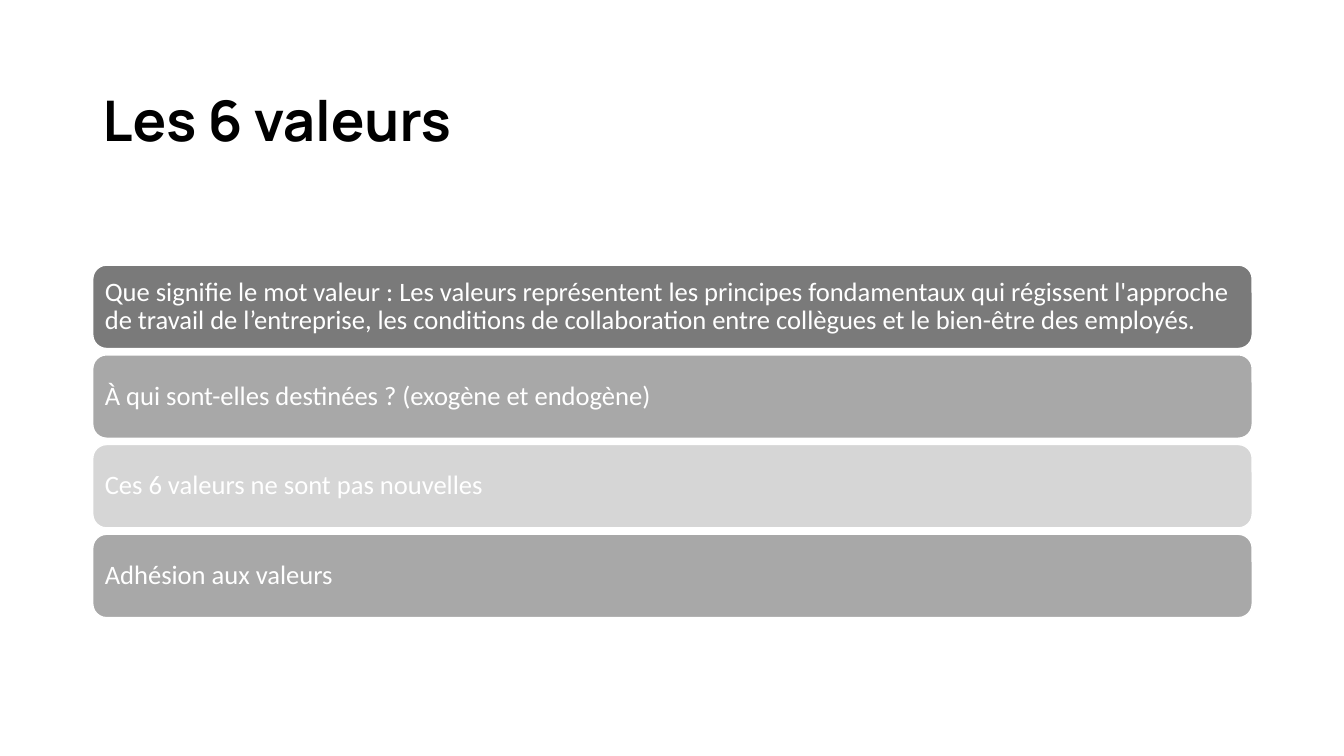
import pptx
import pptx.dml.color
import pptx.enum.shapes
import pptx.enum.text
import pptx.util

BLACK = pptx.dml.color.RGBColor(0x00, 0x00, 0x00)
WHITE = pptx.dml.color.RGBColor(0xFF, 0xFF, 0xFF)
DARK_GREY = pptx.dml.color.RGBColor(0x7A, 0x7A, 0x7A)
MID_GREY = pptx.dml.color.RGBColor(0xA8, 0xA8, 0xA8)
LIGHT_GREY = pptx.dml.color.RGBColor(0xD6, 0xD6, 0xD6)

VALUES = [
    ("Que signifie le mot valeur : Les valeurs représentent les principes "
     "fondamentaux qui régissent l'approche de travail de l’entreprise, les "
     "conditions de collaboration entre collègues et le bien-être des employés.",
     DARK_GREY),
    ("À qui sont-elles destinées ? (exogène et endogène)", MID_GREY),
    ("Ces 6 valeurs ne sont pas nouvelles", LIGHT_GREY),
    ("Adhésion aux valeurs", MID_GREY),
]


def apply_format(target, values):
    for name, value in values.items():
        setattr(target, name, value)


class ValuesSlide:
    left = 0.92
    top = 0.61
    width = 11.5
    row = 0.89
    title_font = {"name": "Manrope", "size": pptx.util.Pt(40), "bold": True}
    bar_font = {"name": "Calibri", "size": pptx.util.Pt(19), "bold": False}
    bar_paragraph = {"space_after": pptx.util.Pt(6.65)}
    bar_margins = {
        f"margin_{side}": pptx.util.Inches(0.08)
        for side in ("left", "top", "right", "bottom")
    }

    def __init__(self, presentation):
        self.slide = presentation.slides.add_slide(presentation.slide_layouts[6])

    def box(self, first_row, rows):
        lengths = (self.left, self.top + first_row * self.row,
                   self.width, rows * self.row)
        return [pptx.util.Inches(length) for length in lengths]

    def add_text(self, shape, text, font, color):
        frame = shape.text_frame
        apply_format(frame, {
            "word_wrap": True,
            "vertical_anchor": pptx.enum.text.MSO_ANCHOR.MIDDLE})
        paragraph = frame.paragraphs[0]
        apply_format(paragraph, {
            "alignment": pptx.enum.text.PP_ALIGN.LEFT,
            "line_spacing": 0.9})
        run = paragraph.add_run()
        run.text = text
        apply_format(run.font, font)
        run.font.color.rgb = color
        return paragraph

    def title(self, text, first_row, rows):
        shape = self.slide.shapes.add_textbox(*self.box(first_row, rows))
        self.add_text(shape, text, self.title_font, BLACK)

    def bar(self, text, fill, first_row, rows):
        shape = self.slide.shapes.add_shape(
            pptx.enum.shapes.MSO_SHAPE.ROUNDED_RECTANGLE,
            *self.box(first_row, rows))
        shape.shadow.inherit = False
        shape.fill.solid()
        shape.fill.fore_color.rgb = fill
        shape.line.color.rgb = WHITE
        shape.line.width = pptx.util.Pt(1)
        apply_format(shape.text_frame, self.bar_margins)
        paragraph = self.add_text(shape, text, self.bar_font, WHITE)
        apply_format(paragraph, self.bar_paragraph)


def main():
    presentation = pptx.Presentation()
    apply_format(presentation, {"slide_width": pptx.util.Inches(13.33),
                                "slide_height": pptx.util.Inches(7.5)})
    page = ValuesSlide(presentation)
    page.title("Les 6 valeurs", 0, 1.39)
    for index, (text, fill) in enumerate(VALUES):
        page.bar(text, fill, 2.27 + index, 0.93)
    presentation.save("out.pptx")


if __name__ == "__main__":
    main()
